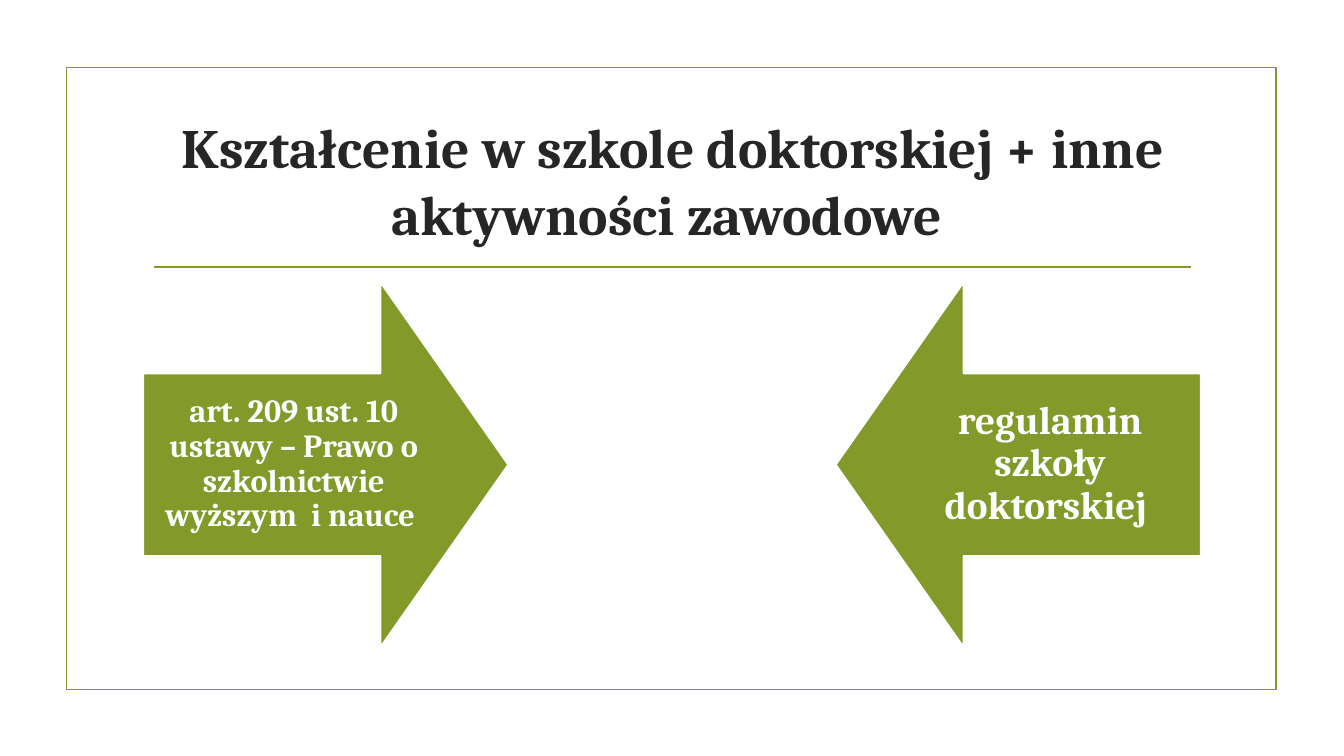
from dataclasses import dataclass

from lxml import etree
from pptx import Presentation, util as u
from pptx.dml.color import RGBColor
from pptx.enum import shapes, text
from pptx.oxml import ns
from pptx.slide import Slide
from pptx.text.text import TextFrame

COLOURS = {"olive": "83992A", "ink": "262626", "paper": "FFFFFF"}
LINE_WIDTH = u.Pt(1.25)
ARROW_TOP, ARROW_SIDE = 2.8, 3.62
LABEL_TOP, LABEL_WIDTH, LABEL_HEIGHT = 3.7, 2.99, 1.81


@dataclass(frozen=True)
class Source:
    wording: str
    arrow_left: float
    label_left: float
    rotation: int
    size: float
    inset: float


SOURCES = [
    Source("art. 209 ust. 10 ustawy – Prawo o szkolnictwie wyższym  i nauce ",
           1.42, 1.42, 270, 23, 0.18),
    Source("regulamin szkoły doktorskiej ", 8.29, 8.92, 90, 28, 0.22),
]


def colour(name: str) -> RGBColor:
    return RGBColor.from_string(COLOURS[name])


def apply(target: object, values: dict) -> None:
    for name, value in values.items():
        setattr(target, name, value)


def write(frame: TextFrame, wording: str, size: float, ink: str,
          inset: tuple[float, float], spacing: float) -> None:
    across, down = map(u.Inches, inset)
    apply(frame, {
        "text": wording,
        "word_wrap": True,
        "auto_size": text.MSO_AUTO_SIZE.NONE,
        "vertical_anchor": text.MSO_ANCHOR.MIDDLE,
        "margin_left": across,
        "margin_right": across,
        "margin_top": down,
        "margin_bottom": down,
    })
    paragraph = frame.paragraphs[0]
    apply(paragraph, {"alignment": text.PP_ALIGN.CENTER, "line_spacing": spacing})
    font = paragraph.runs[0].font
    apply(font, {"name": "Cambria", "size": u.Pt(size), "bold": True})
    font.color.rgb = colour(ink)


def draw_frame(slide: Slide) -> None:
    border = slide.shapes.add_shape(
        shapes.MSO_SHAPE.RECTANGLE, *map(u.Inches, (0.66, 0.67, 12, 6.17)))
    border.shadow.inherit = False
    border.fill.background()
    rule = slide.shapes.add_connector(
        shapes.MSO_CONNECTOR.STRAIGHT, *map(u.Inches, (1.53, 2.65, 11.81, 2.65)))
    etree.SubElement(rule._element.spPr, ns.qn("a:effectLst"))
    for outlined in (border, rule):
        outlined.line.color.rgb = colour("olive")
        outlined.line.width = LINE_WIDTH


def draw_title(slide: Slide) -> None:
    heading = slide.shapes.title
    apply(heading, {"left": u.Inches(1.42), "top": u.Inches(1.07),
                    "width": u.Inches(10.5), "height": u.Inches(1.43)})
    write(heading.text_frame, "Kształcenie w szkole doktorskiej + inne aktywności zawodowe ",
          39.6, "ink", (0.1, 0.05), 1.0)


def draw_source(slide: Slide, source: Source) -> None:
    arrow = slide.shapes.add_shape(
        shapes.MSO_SHAPE.DOWN_ARROW,
        *map(u.Inches, (source.arrow_left, ARROW_TOP, ARROW_SIDE, ARROW_SIDE)))
    arrow.rotation = source.rotation
    arrow.adjustments[0], arrow.adjustments[1] = 0.5, 0.35
    arrow.shadow.inherit = False
    arrow.fill.solid()
    arrow.fill.fore_color.rgb = colour("olive")
    arrow.line.color.rgb = colour("paper")
    arrow.line.width = LINE_WIDTH
    label = slide.shapes.add_textbox(
        *map(u.Inches, (source.label_left, LABEL_TOP, LABEL_WIDTH, LABEL_HEIGHT)))
    write(label.text_frame, source.wording, source.size, "paper",
          (source.inset, source.inset), 0.9)


def main() -> None:
    deck = Presentation()
    apply(deck, {"slide_width": u.Inches(13.33), "slide_height": u.Inches(7.5)})
    slide = deck.slides.add_slide(deck.slide_layouts.get_by_name("Title Only"))
    slide.background.fill.solid()
    slide.background.fill.fore_color.rgb = colour("paper")
    draw_frame(slide)
    draw_title(slide)
    for source in SOURCES:
        draw_source(slide, source)
    deck.save("out.pptx")


if __name__ == "__main__":
    main()
